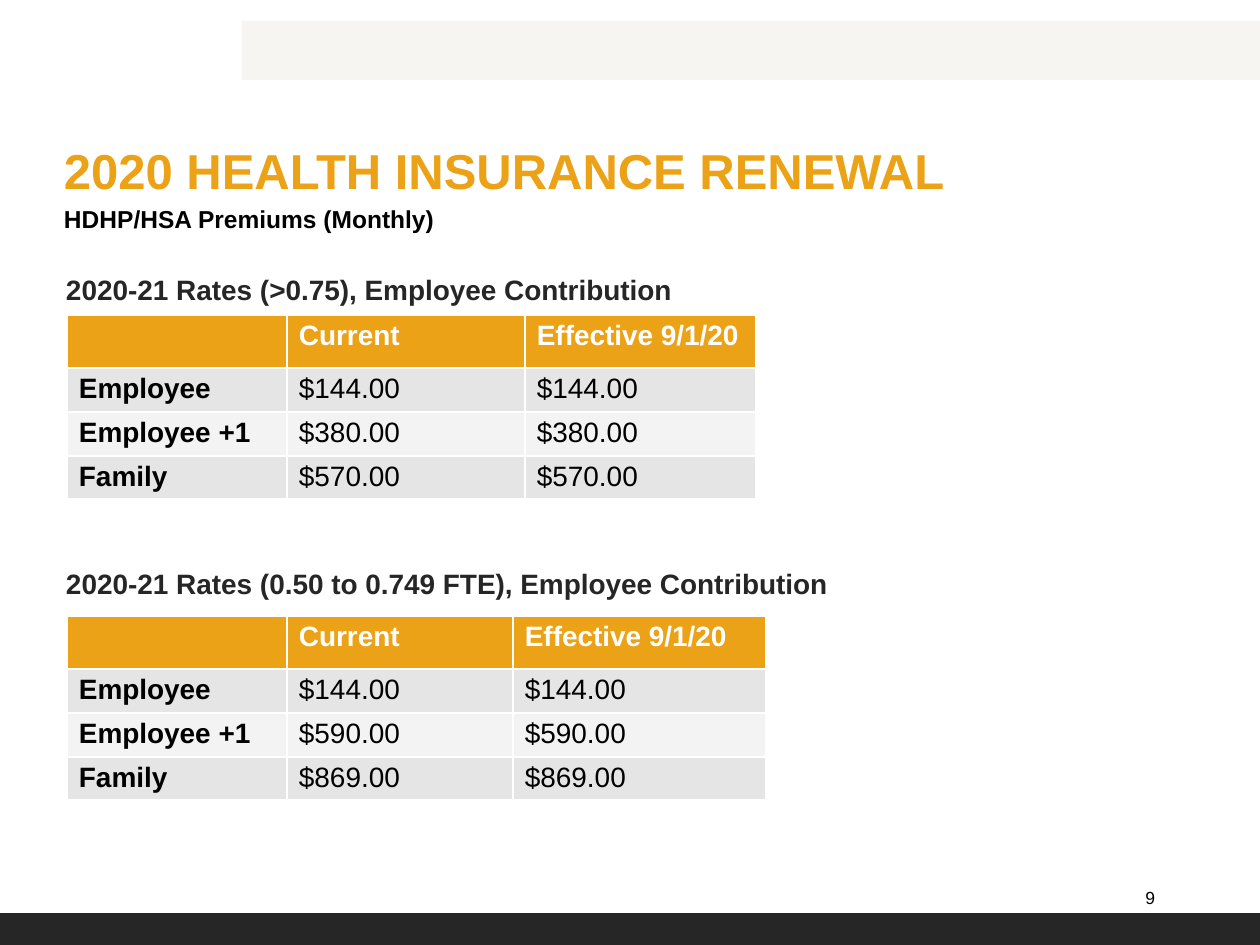
from lxml.etree import SubElement
from pptx import Presentation
from pptx.dml.color import RGBColor
from pptx.enum.shapes import MSO_SHAPE as Shape
from pptx.enum.text import MSO_ANCHOR as Anchor, MSO_AUTO_SIZE as Auto, PP_ALIGN as Align
from pptx.oxml.ns import qn
from pptx.util import Emu, Pt

PX = 914400 // 126
HUE = {"gold": "EBA217", "dark": "262626", "cream": "F7F5F2", "black": "000000",
       "white": "FFFFFF", "odd": "E5E5E6", "even": "F3F3F3"}


def write(frame, *lines, size=16, hue="black", bold=False, align=Align.LEFT,
          anchor=Anchor.TOP, pad=(0, 0, 0, 0), gap=0, lead=None):
    """Fill a text frame; pad is left, top, right, bottom in px, gap is in points."""
    frame.word_wrap = True
    frame.auto_size = Auto.NONE
    frame.vertical_anchor = anchor
    (frame.margin_left, frame.margin_top,
     frame.margin_right, frame.margin_bottom) = [Emu(n * PX) for n in pad]
    for i, line in enumerate(lines):
        para = frame.add_paragraph() if i else frame.paragraphs[0]
        props = para._p.get_or_add_pPr()
        props.set("marL", "0")
        props.set("indent", "0")
        para.alignment = align
        para.line_spacing = lead
        para.space_before = Pt(gap if i else 0)
        para.space_after = Pt(0)
        SubElement(props, qn("a:buNone"))
        run = para.add_run()
        run.text = line
        font = run.font
        font.name, font.size, font.bold = "Arial", Pt(size), bold
        font.color.rgb = RGBColor.from_string(HUE[hue])


def place(item, *box):
    item.left, item.top, item.width, item.height = [Emu(n * PX) for n in box]


deck = Presentation()
deck.slide_width, deck.slide_height = Emu(1260 * PX), Emu(945 * PX)
slide = deck.slides.add_slide(deck.slide_layouts[3])
shapes = slide.shapes

# Bands at the top and bottom
for hue, box in (("cream", (242, 21, 1018, 59)), ("dark", (0, 913, 1260, 32))):
    band = shapes.add_shape(Shape.RECTANGLE, *[Emu(n * PX) for n in box])
    band.shadow.inherit = False
    band.fill.solid()
    band.fill.fore_color.rgb = RGBColor.from_string(HUE[hue])
    band.line.fill.background()

# Title, subtitle and table headings
title, sub, rates = slide.placeholders
place(title, 64, 136, 1109, 63)
write(title.text_frame, "2020 HEALTH INSURANCE RENEWAL",
      size=28, hue="gold", bold=True, anchor=Anchor.BOTTOM)
place(sub, 64, 200, 1109, 42)
write(sub.text_frame, "HDHP/HSA Premiums (Monthly)", size=14, bold=True, lead=1.14)
place(rates, 66, 262, 1109, 571)
write(rates.text_frame, "2020-21 Rates (>0.75), Employee Contribution",
      "2020-21 Rates (0.50 to 0.749 FTE), Employee Contribution",
      hue="dark", bold=True, pad=(0, 6, 0, 6), gap=146, lead=1.14)

# Premium tables
HEAD = ("", "Current", "Effective 9/1/20")
GROUPS = ("Employee", "Employee +1", "Family")
TABLES = ((315, (220, 238, 231), ("$144.00", "$380.00", "$570.00")),
          (616, (220, 226, 253), ("$144.00", "$590.00", "$869.00")))
HIGH = (53, 44, 44, 43)
for top, wide, costs in TABLES:
    rows = [HEAD] + [(group, cost, cost) for group, cost in zip(GROUPS, costs)]
    box = (67, top, sum(wide), sum(HIGH))
    table = shapes.add_table(4, 3, *[Emu(n * PX) for n in box]).table
    for col, width in zip(table.columns, wide):
        col.width = Emu(width * PX)
    for r, row in enumerate(rows):
        table.rows[r].height = Emu(HIGH[r] * PX)
        fill = "gold" if r == 0 else "odd" if r % 2 else "even"
        for c, text in enumerate(row):
            cell = table.cell(r, c)
            cell.margin_left = cell.margin_right = Emu(12 * PX)
            cell.margin_top = cell.margin_bottom = Emu(5 * PX)
            props = cell._tc.get_or_add_tcPr()
            for side in ("lnL", "lnR", "lnT", "lnB"):
                line = SubElement(props, qn("a:" + side), w=str(Pt(1)))
                paint = SubElement(line, qn("a:solidFill"))
                SubElement(paint, qn("a:srgbClr"), val=HUE["white"])
            cell.fill.solid()
            cell.fill.fore_color.rgb = RGBColor.from_string(HUE[fill])
            if text:
                para = cell.text_frame.paragraphs[0]
                para.text = text
                font = para.runs[0].font
                font.name, font.size = "Arial", Pt(16)
                font.bold = r == 0 or c == 0
                font.color.rgb = RGBColor.from_string(HUE["black" if r else "white"])

# Page number
page = shapes.add_textbox(*[Emu(n * PX) for n in (1126, 873, 42, 50)])
write(page.text_frame, "9", size=10, align=Align.RIGHT,
      anchor=Anchor.MIDDLE, pad=(0, 0, 13, 0))

deck.save("out.pptx")
